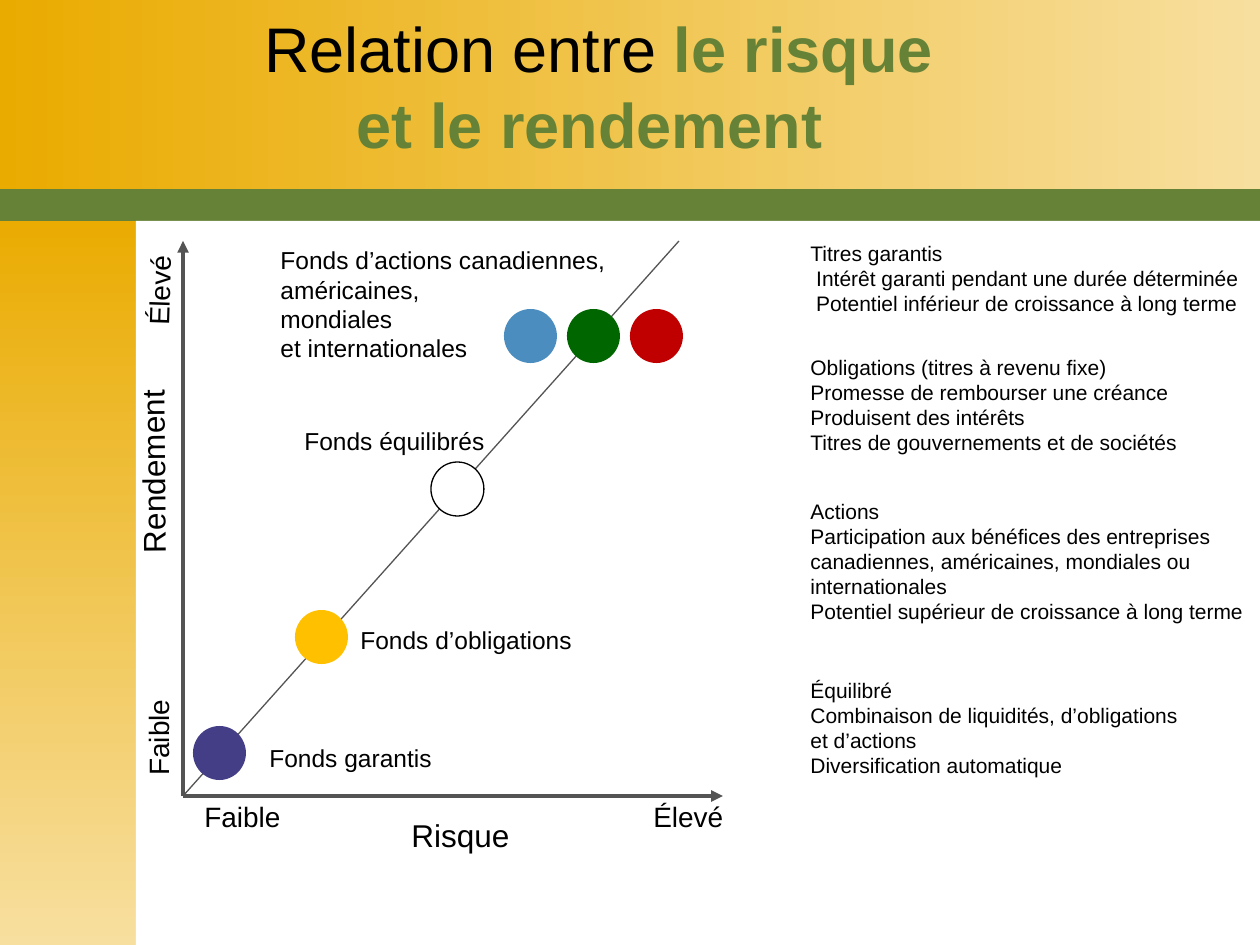
"""Build a slide that relates the risk of fund types to their return."""
from lxml.etree import SubElement
from pptx import Presentation
from pptx.dml.color import RGBColor
from pptx.enum.shapes import MSO_CONNECTOR, MSO_SHAPE
from pptx.enum.text import MSO_ANCHOR, MSO_AUTO_SIZE, PP_ALIGN
from pptx.oxml.ns import qn
from pptx.util import Emu, Pt

WIDTH, HEIGHT = 1260, 945
BLACK, GREEN, GREY = "000000", "658237", "545454"
FADE = ("EAAB00", "F7DF9F")
BANDS = [
    ((0, 0, 1260, 189), FADE, 0),
    ((0, 210, 136, 735), FADE, 270),
    ((-4, 189, 1264, 32), (GREEN,), 0),
    ((136, 221, 1124, 724), ("FFFFFF",), 0),
]
ORIGIN = (183, 796)
LINES = [
    ((183, 241), 2.25, True),
    ((723, 796), 2.25, True),
    ((679, 241), 0.75, False),
]
DOTS = [
    (295, 610, "FFC000", None),
    (567, 309, "006600", None),
    (504, 309, "4B8DBE", None),
    (630, 309, "C00000", None),
    (193, 726, "443E86", None),
    (431, 462, "FFFFFF", BLACK),
]
DOT = (53, 54)
LABELS = [
    ("Rendement", (54, 442, 197, 50), 18, 269.5),
    ("Faible", (192, 793, 110, 47), 16, 0),
    ("Élevé", (641, 793, 95, 47), 16, 0),
    ("Risque", (399, 810, 125, 50), 18, 0),
    ("Faible", (108, 714, 101, 47), 16, 270),
    ("Élevé", (112, 267, 95, 47), 16, 271.8),
    ("Fonds d’obligations", (348, 619, 237, 43), 14, 0),
    ("Fonds d’actions canadiennes,\vaméricaines,\vmondiales\vet internationales",
     (268, 239, 360, 161), 14, 0),
    ("Fonds garantis", (257, 737, 189, 43), 14, 0),
    ("Fonds équilibrés", (292, 420, 213, 43), 14, 0),
]
NOTE_LEFT = 798
NOTES = [
    (234, 462, 89, ["Titres garantis",
                    " Intérêt garanti pendant une durée déterminée",
                    " Potentiel inférieur de croissance à long terme"]),
    (348, 451, 115, ["Obligations (titres à revenu fixe)",
                     "Promesse de rembourser une créance",
                     "Produisent des intérêts",
                     "Titres de gouvernements et de sociétés"]),
    (492, 462, 140, ["Actions",
                     "Participation aux bénéfices des entreprises canadiennes, "
                     "américaines, mondiales ou internationales",
                     "Potentiel supérieur de croissance à long terme"]),
    (671, 397, 115, ["Équilibré",
                     "Combinaison de liquidités, d’obligations et d’actions",
                     "Diversification automatique"]),
]


def px(*nums):
    return [Emu(round(num * 914400 / 126)) for num in nums]


def paint(color, code):
    color.rgb = RGBColor.from_string(code)


def style(run, size, code=BLACK, bold=None):
    run.font.name, run.font.size, run.font.bold = "Arial", Pt(size), bold
    paint(run.font.color, code)


def add_form(slide, kind, box, codes, edge=None, angle=0):
    form = slide.shapes.add_shape(kind, *px(*box))
    form.shadow.inherit = False
    if len(codes) > 1:
        form.fill.gradient()
        form.fill.gradient_angle = angle
        for stop, code in zip(form.fill.gradient_stops, codes):
            paint(stop.color, code)
    else:
        form.fill.solid()
        paint(form.fill.fore_color, codes[0])
    if edge:
        paint(form.line.color, edge)
        form.line.width = Pt(0.75)
    else:
        form.line.fill.background()


def add_line(slide, end, width, arrow):
    line = slide.shapes.add_connector(MSO_CONNECTOR.STRAIGHT, *px(*ORIGIN, *end))
    paint(line.line.color, GREY)
    line.line.width = Pt(width)
    if arrow:
        SubElement(line.line._get_or_add_ln(), qn("a:tailEnd"), type="triangle")
    SubElement(line._element.spPr, qn("a:effectLst"))


def add_text(slide, text, box, size, turn=0, wrap=False):
    label = slide.shapes.add_textbox(*px(*box))
    label.rotation = turn
    frame = label.text_frame
    frame.word_wrap = wrap
    frame.auto_size = MSO_AUTO_SIZE.SHAPE_TO_FIT_TEXT
    frame.text = text
    for para in frame.paragraphs:
        for run in para.runs:
            style(run, size)


def set_title(slide):
    title = slide.shapes.title
    title.left, title.top, title.width, title.height = px(63, 0, 1071, 171)
    frame = title.text_frame
    frame.vertical_anchor = MSO_ANCHOR.MIDDLE
    para = frame.paragraphs[0]
    para.alignment = PP_ALIGN.CENTER
    para.text = "Relation entre "
    style(para.runs[0], 36)
    for text in ("le risque", "et le rendement "):
        run = para.add_run()
        run.text = text
        style(run, 36, GREEN, True)
        if text == "le risque":
            para.add_line_break()
            SubElement(para._p[-1], qn("a:rPr"), sz="3600")


def main():
    deck = Presentation()
    deck.slide_width, deck.slide_height = px(WIDTH, HEIGHT)
    slide = deck.slides.add_slide(deck.slide_layouts[5])
    for box, codes, angle in BANDS:
        add_form(slide, MSO_SHAPE.RECTANGLE, box, codes, angle=angle)
    for end, width, arrow in LINES:
        add_line(slide, end, width, arrow)
    for left, top, code, edge in DOTS:
        add_form(slide, MSO_SHAPE.OVAL, (left, top, *DOT), (code,), edge)
    for text, box, size, turn in LABELS:
        add_text(slide, text, box, size, turn)
    for top, width, height, rows in NOTES:
        add_text(slide, "\n".join(rows), (NOTE_LEFT, top, width, height), 12, wrap=True)
    set_title(slide)
    tree = slide.shapes._spTree
    tree.append(slide.shapes.title._element)
    deck.save("out.pptx")


if __name__ == "__main__":
    main()
